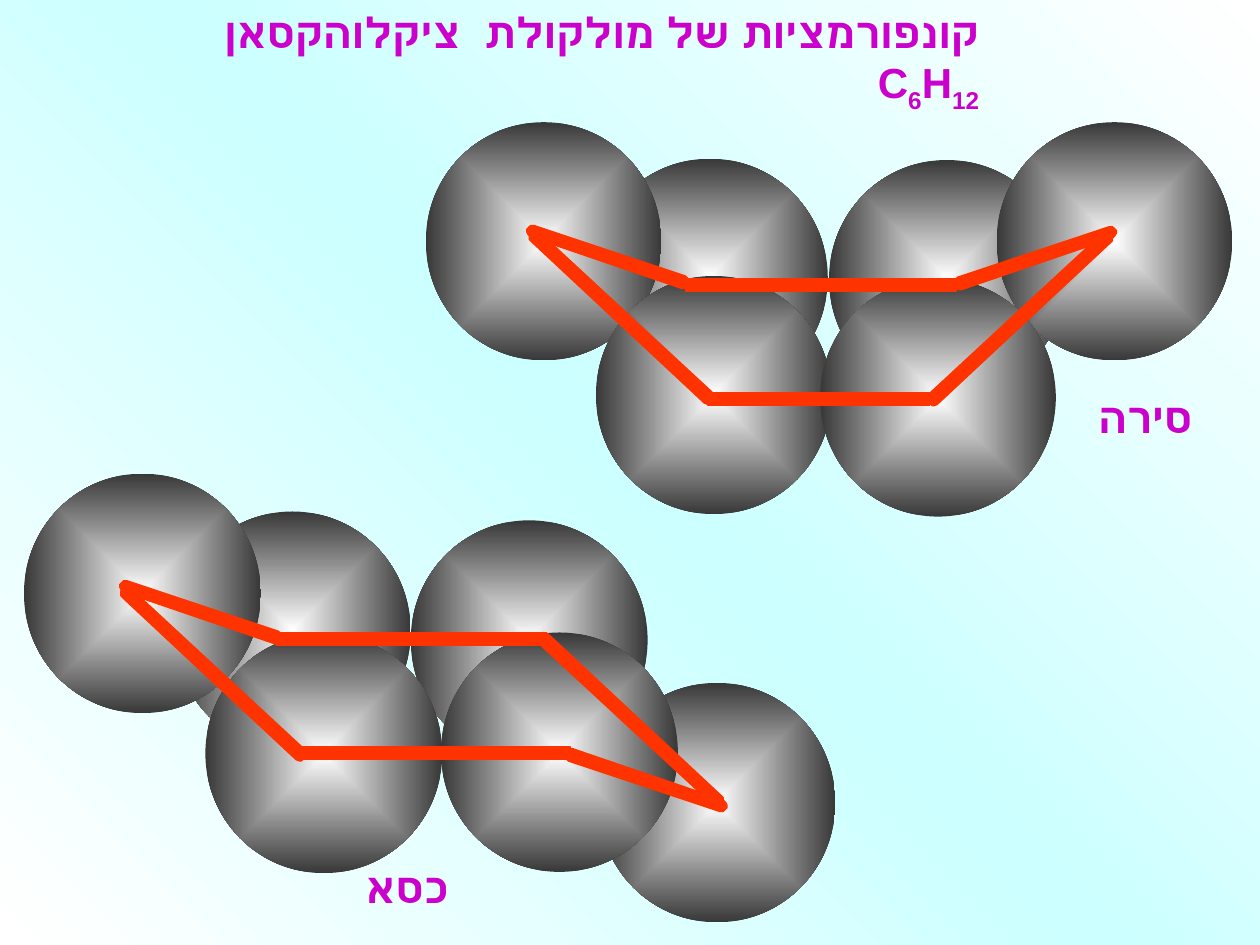
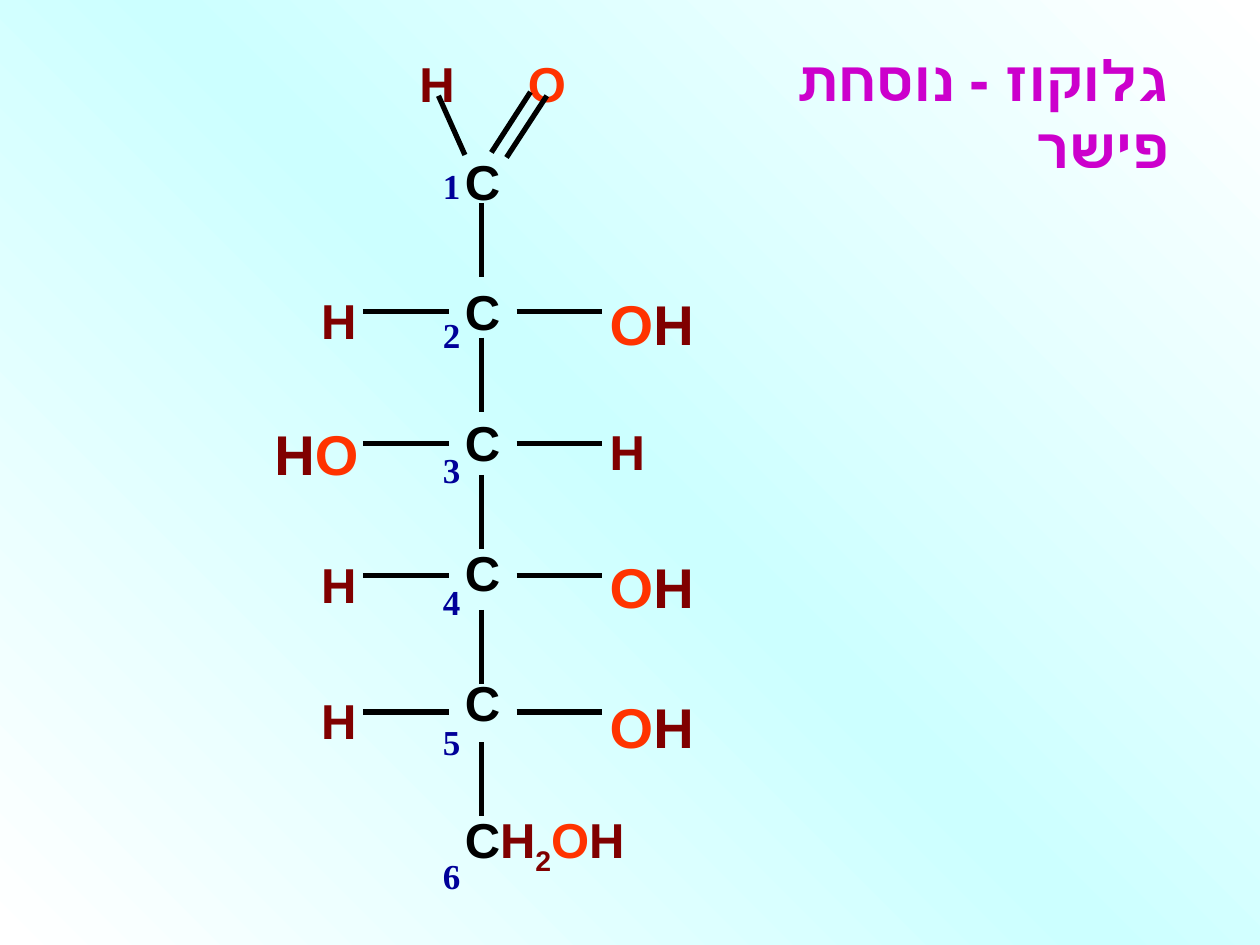
from lxml import etree
from pptx import Presentation
from pptx.dml.color import RGBColor
from pptx.enum.shapes import MSO_CONNECTOR, MSO_SHAPE
from pptx.enum.text import MSO_AUTO_SIZE, PP_ALIGN
from pptx.oxml.ns import qn
from pptx.util import Pt

PX = 9144  # EMU in one px, 100 px to the inch
OVAL, RECT = MSO_SHAPE.OVAL, MSO_SHAPE.RECTANGLE
STRAIGHT = MSO_CONNECTOR.STRAIGHT
LEFT, CENTER, RIGHT = PP_ALIGN.LEFT, PP_ALIGN.CENTER, PP_ALIGN.RIGHT
GROW = MSO_AUTO_SIZE.SHAPE_TO_FIT_TEXT
COLORS = {
    "white": "FFFFFF", "sky": "CCFFFF", "charcoal": "383838", "bond": "FF3300",
    "title": "CC00CC", "number": "000099",
    "C": "000000", "H": "800000", "O": "FF3300",
}


def paint_gradient(element, colors, direction, **settings):
    """Refill the gradient in element with evenly spaced colors; return its direction node."""
    gradient = next(element.iter(qn("a:gradFill")))
    for child in list(gradient):
        gradient.remove(child)
    stops = etree.SubElement(gradient, qn("a:gsLst"))
    for index, color in enumerate(colors):
        position = 100000 * index // (len(colors) - 1)
        stop = etree.SubElement(stops, qn("a:gs"), pos=str(position))
        etree.SubElement(stop, qn("a:srgbClr"), val=COLORS[color])
    return etree.SubElement(gradient, qn(direction), **settings)


def add_text(page, place, lines, size, align=LEFT, spacing=None, name="Arial", rtl=False):
    """Add a text box; each line is a list of (text, color, baseline) spans."""
    box = page.shapes.add_textbox(*(PX * length for length in place))
    frame = box.text_frame
    frame.word_wrap = True
    frame.auto_size = GROW
    for index, spans in enumerate(lines):
        para = frame.add_paragraph() if index else frame.paragraphs[0]
        settings = para._p.get_or_add_pPr()
        before = etree.SubElement(settings, qn("a:spcBef"))
        etree.SubElement(before, qn("a:spcPct"), val="50000")
        para.alignment = align
        para.line_spacing = spacing
        para.font.size = Pt(size)
        para.font.bold = True
        para.font.color.rgb = RGBColor.from_string(COLORS[spans[0][1]])
        para.font.name = name
        if rtl:
            settings.set("rtl", "1")
        for text, color, baseline in spans:
            span = para.add_run()
            span.text = text
            if color != spans[0][1]:
                span.font.color.rgb = RGBColor.from_string(COLORS[color])
            if baseline:
                span.font._element.set("baseline", str(baseline * 1000))


deck = Presentation()
deck.slide_width, deck.slide_height = 1000 * PX, 750 * PX
pages = []
for _ in range(2):
    page = deck.slides.add_slide(deck.slide_layouts[6])
    page.background.fill.gradient()
    paint_gradient(page._element, ["white", "sky", "white"], "a:lin",
                   ang=str(315 * 60000), scaled="1")
    pages.append(page)
conformations, fischer = pages

# Cyclohexane conformations
add_text(conformations, (101, 0, 686, 50),
         [[("קונפורמציות של מולקולת  ציקלוהקסאן  C", "title", 0), ("6", "title", -25),
           ("H", "title", 0), ("12 ", "title", -25)]],
         24, RIGHT, rtl=True)

# Slanted bonds, drawn down to the right; the others are mirrored
SHORT_BOND = [(123, 50), (125, 50), (127, 49), (129, 47), (129, 44), (128, 42), (126, 40),
              (6, 0), (3, 0), (2, 1), (0, 3), (0, 5), (1, 7), (3, 9)]
LONG_BOND = [(9, 2), (5, 1), (3, 0), (0, 3), (0, 7), (2, 9), (138, 136), (139, 137),
             (142, 138), (143, 138), (147, 135), (147, 131), (145, 128)]
molecules = [
    {"name": "כסא", "label": (233, 679), "atom": (188, 190),
     "atoms": [(138, 406), (326, 413), (475, 542), (350, 502), (19, 376), (163, 503)],
     "flat": [(219, 502, 215), (238, 593, 215)],
     "slanted": [(SHORT_BOND, 95, 461, False, False), (LONG_BOND, 96, 466, False, False),
                 (SHORT_BOND, 448, 594, True, True), (LONG_BOND, 427, 502, True, True)]},
    {"name": "סירה", "label": (823, 306), "atom": (187, 189),
     "atoms": [(658, 127), (470, 126), (791, 97), (338, 97), (473, 219), (651, 221)],
     "flat": [(544, 221, 215), (562, 312, 176)],
     "slanted": [(SHORT_BOND, 757, 180, True, False), (LONG_BOND, 736, 184, True, False),
                 (SHORT_BOND, 418, 179, False, False), (LONG_BOND, 420, 183, False, False)]},
]
for molecule in molecules:
    add_text(conformations, (*molecule["label"], 133, 50),
             [[(molecule["name"], "title", 0)]], 24, RIGHT, rtl=True)
    width, height = molecule["atom"]
    for left, top in molecule["atoms"]:
        atom = conformations.shapes.add_shape(OVAL, left * PX, top * PX, width * PX, height * PX)
        atom.shadow.inherit = False
        atom.line.fill.background()
        atom.fill.gradient()
        center = paint_gradient(atom._element, ["white", "charcoal"], "a:path", path="shape")
        etree.SubElement(center, qn("a:fillToRect"), l="50000", t="50000", r="50000", b="50000")

    bonds = []
    for left, top, length in molecule["flat"]:
        bonds.append(conformations.shapes.add_shape(
            RECT, left * PX, top * PX, length * PX, 10 * PX))
    for outline, left, top, flip_x, flip_y in molecule["slanted"]:
        right = max(x for x, y in outline)
        bottom = max(y for x, y in outline)
        points = [(left + (right - x if flip_x else x), top + (bottom - y if flip_y else y))
                  for x, y in outline]
        builder = conformations.shapes.build_freeform(*points[0], scale=PX)
        builder.add_line_segments(points[1:], close=True)
        bonds.append(builder.convert_to_shape())
    for bond in bonds:
        bond.shadow.inherit = False
        bond.fill.solid()
        bond.fill.fore_color.rgb = RGBColor.from_string(COLORS["bond"])
        bond.line.color.rgb = RGBColor.from_string(COLORS["bond"])
        bond.line.width = Pt(0.75)

# Fischer formula of glucose
add_text(fischer, (527, 31, 411, 63), [[("גלוקוז - נוסחת פישר", "title", 0)]],
         32, RIGHT, rtl=True)

chain = [[("C", "C", 0)] for _ in range(5)]
chain.append([("C", "C", 0), ("H", "H", 0), ("2", "H", -25), ("O", "O", 0), ("H", "H", 0)])
add_text(fischer, (359, 78, 222, 631), chain, 28, spacing=1.8)

groups = [
    ("H", 323, 0), ("O", 409, 0),
    ("H", 245, 188), ("OH", 474, 182),
    ("HO", 208, 285), ("H", 474, 292),
    ("H", 245, 398), ("OH", 474, 391),
    ("H", 245, 506), ("OH", 474, 502),
]
for letters, left, top in groups:
    size, height = (32, 106) if len(letters) == 2 else (28, 94)
    add_text(fischer, (left, top, 92, height),
             [[(letter, letter, 0) for letter in letters]], size, spacing=1.8)

for number, top in enumerate([126, 244, 351, 456, 567, 673], start=1):
    add_text(fischer, (328, top, 61, 43), [[(str(number), "number", 0)]],
             20, CENTER, name="Times New Roman")

links = [(369, 123, 348, 76), (390, 121, 421, 73), (402, 125, 434, 76)]
links += [(left, y, left + 68, y) for y in (247, 352, 457, 565) for left in (288, 410)]
links += [(382, top, 382, top + 59) for top in (161, 268, 377, 484, 589)]
for ends in links:
    link = fischer.shapes.add_connector(STRAIGHT, *(PX * end for end in ends))
    link.line.color.rgb = RGBColor.from_string(COLORS["C"])
    link.line.width = Pt(3)
    etree.SubElement(link._element.spPr, qn("a:effectLst"))

deck.save("out.pptx")
